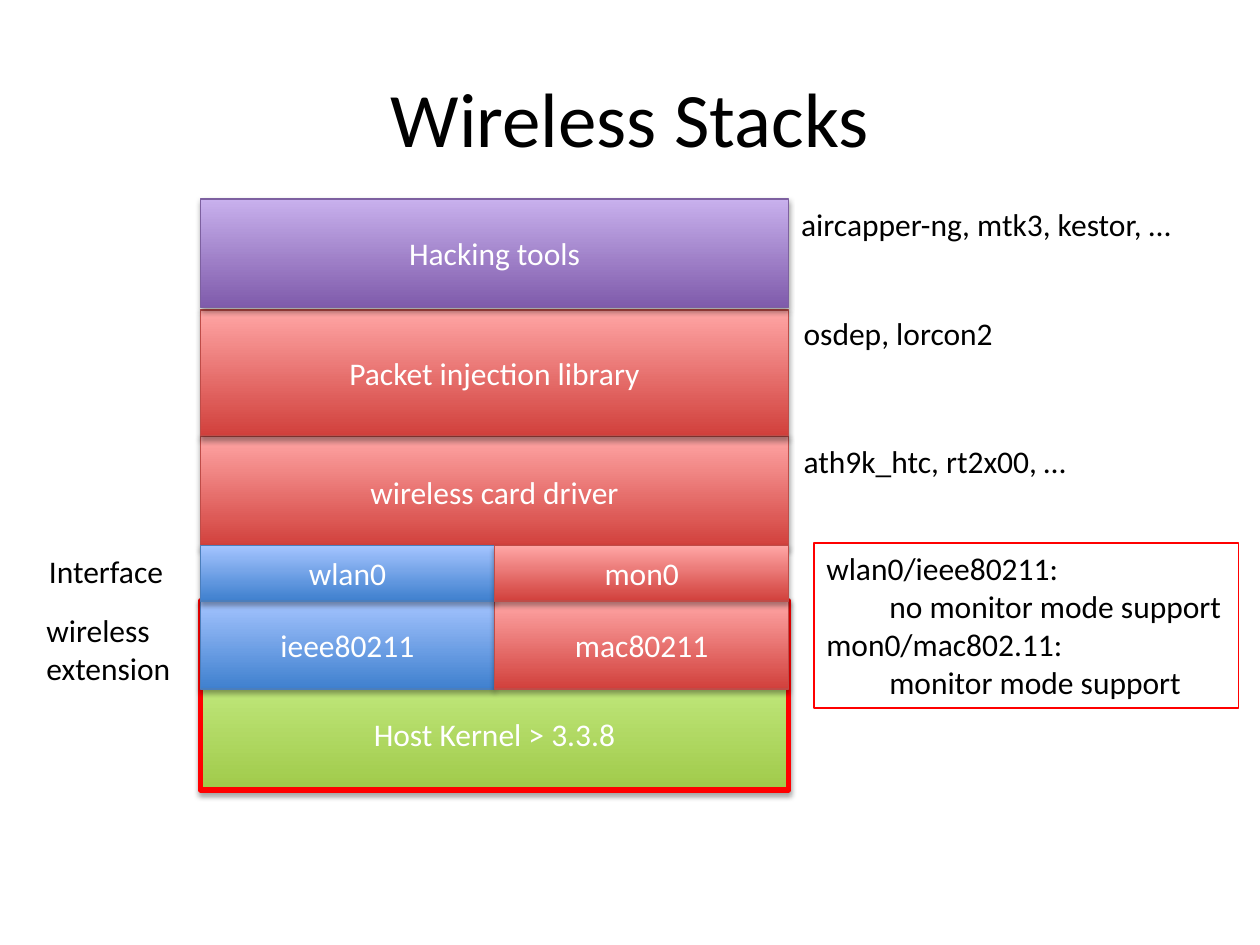
"""Build the Wireless Stacks slide: a layered block diagram with side labels."""
from lxml import etree
from pptx import Presentation
from pptx.dml.color import RGBColor
from pptx.enum import shapes, text
from pptx.oxml import ns
from pptx.util import Inches, Pt

BLACK = RGBColor(0x00, 0x00, 0x00)
WHITE = RGBColor(0xFF, 0xFF, 0xFF)
BRIGHT_RED = RGBColor(0xFF, 0x00, 0x00)
GREEN = (RGBColor(0xA0, 0xCA, 0x4A), RGBColor(0xDA, 0xFF, 0xA5), BRIGHT_RED)
BLUE = (RGBColor(0x3F, 0x80, 0xCE), RGBColor(0xA4, 0xC4, 0xFF), RGBColor(0x4B, 0x7E, 0xBC))
RED = (RGBColor(0xD1, 0x40, 0x3C), RGBColor(0xFF, 0xA6, 0xA5), RGBColor(0xBF, 0x4C, 0x48))
PURPLE = (RGBColor(0x7F, 0x5B, 0xAB), RGBColor(0xC8, 0xB0, 0xED), RGBColor(0x7D, 0x60, 0xA0))

LEFT, FULL = 1.59, 4.67
HALF = FULL / 2
MIDDLE = LEFT + HALF


def set_font(p, size, color):
    p.font.name = "Calibri"
    p.font.size = Pt(size)
    p.font.color.rgb = color


def add_shadow(sp):
    sp.shadow.inherit = False
    effects = sp._element.spPr.find(ns.qn("a:effectLst"))
    shadow = etree.SubElement(effects, ns.qn("a:outerShdw"), blurRad="40000",
                              dist="23000", dir="5400000", rotWithShape="0")
    color = etree.SubElement(shadow, ns.qn("a:srgbClr"), val="000000")
    etree.SubElement(color, ns.qn("a:alpha"), val="35000")


prs = Presentation()
prs.slide_width, prs.slide_height = Inches(10), Inches(7.5)
s = prs.slides.add_slide(prs.slide_layouts[5])

title = s.shapes.title
title.left, title.top = Inches(0.5), Inches(0.3)
title.width, title.height = Inches(9), Inches(1.25)
title.text_frame.text = "Wireless Stacks"
title.text_frame.vertical_anchor = text.MSO_ANCHOR.MIDDLE
p = title.text_frame.paragraphs[0]
p.alignment = text.PP_ALIGN.CENTER
set_font(p, 44, BLACK)

layers = [
    ("Host Kernel > 3.3.8", LEFT, 4.77, FULL, 1.5, GREEN, 3, 0.66),
    ("ieee80211", LEFT, 4.77, HALF, 0.7, BLUE, 0.75, 0.05),
    ("mac80211", MIDDLE, 4.77, HALF, 0.7, RED, 0.75, 0.05),
    ("wireless card driver", LEFT, 3.46, FULL, 0.88, RED, 0.75, 0.05),
    ("Packet injection library", LEFT, 2.46, FULL, 1, RED, 0.75, 0.05),
    ("Hacking tools", LEFT, 1.58, FULL, 0.86, PURPLE, 0.75, 0.05),
    ("wlan0", LEFT, 4.33, HALF, 0.44, BLUE, 0.75, 0.05),
    ("mon0", MIDDLE, 4.33, HALF, 0.44, RED, 0.75, 0.05),
]
for name, x, y, w, h, (dark, light, edge), weight, top_margin in layers:
    sp = s.shapes.add_shape(shapes.MSO_SHAPE.RECTANGLE, Inches(x), Inches(y), Inches(w), Inches(h))
    sp.fill.gradient()
    sp.fill.gradient_angle = 90
    for stop, color in zip(sp.fill.gradient_stops, (dark, light)):
        stop.color.rgb = color
    sp.line.color.rgb = edge
    sp.line.width = Pt(weight)
    add_shadow(sp)
    tf = sp.text_frame
    tf.text = name
    tf.margin_top = Inches(top_margin)
    tf.vertical_anchor = text.MSO_ANCHOR.MIDDLE
    p = tf.paragraphs[0]
    p.alignment = text.PP_ALIGN.CENTER
    set_font(p, 18, WHITE)

labels = [
    (["wireless", "extension"], 0.27, 4.8, 1.2, 0.71),
    (["Interface"], 0.29, 4.33, 1.13, 0.4),
    (["ath9k_htc, rt2x00, …"], 6.28, 3.46, 2.33, 0.4),
    (["osdep, lorcon2"], 6.28, 2.44, 1.72, 0.4),
    (["aircapper-ng, mtk3, kestor, …"], 6.26, 1.58, 3.28, 0.4),
    (["wlan0/ieee80211:", "no monitor mode support",
      "mon0/mac802.11:", "monitor mode support"], 6.46, 4.31, 3.37, 1.31),
]
for lines, x, y, w, h in labels:
    sp = s.shapes.add_textbox(Inches(x), Inches(y), Inches(w), Inches(h))
    tf = sp.text_frame
    tf.word_wrap = False
    tf.text = "\n".join(lines)
    for p in tf.paragraphs:
        set_font(p, 18, BLACK)

sp.line.color.rgb = BRIGHT_RED
sp.line.width = Pt(0.75)
for p in tf.paragraphs[1::2]:
    p._p.get_or_add_pPr().set("marL", str(Inches(0.5)))

prs.save("out.pptx")
